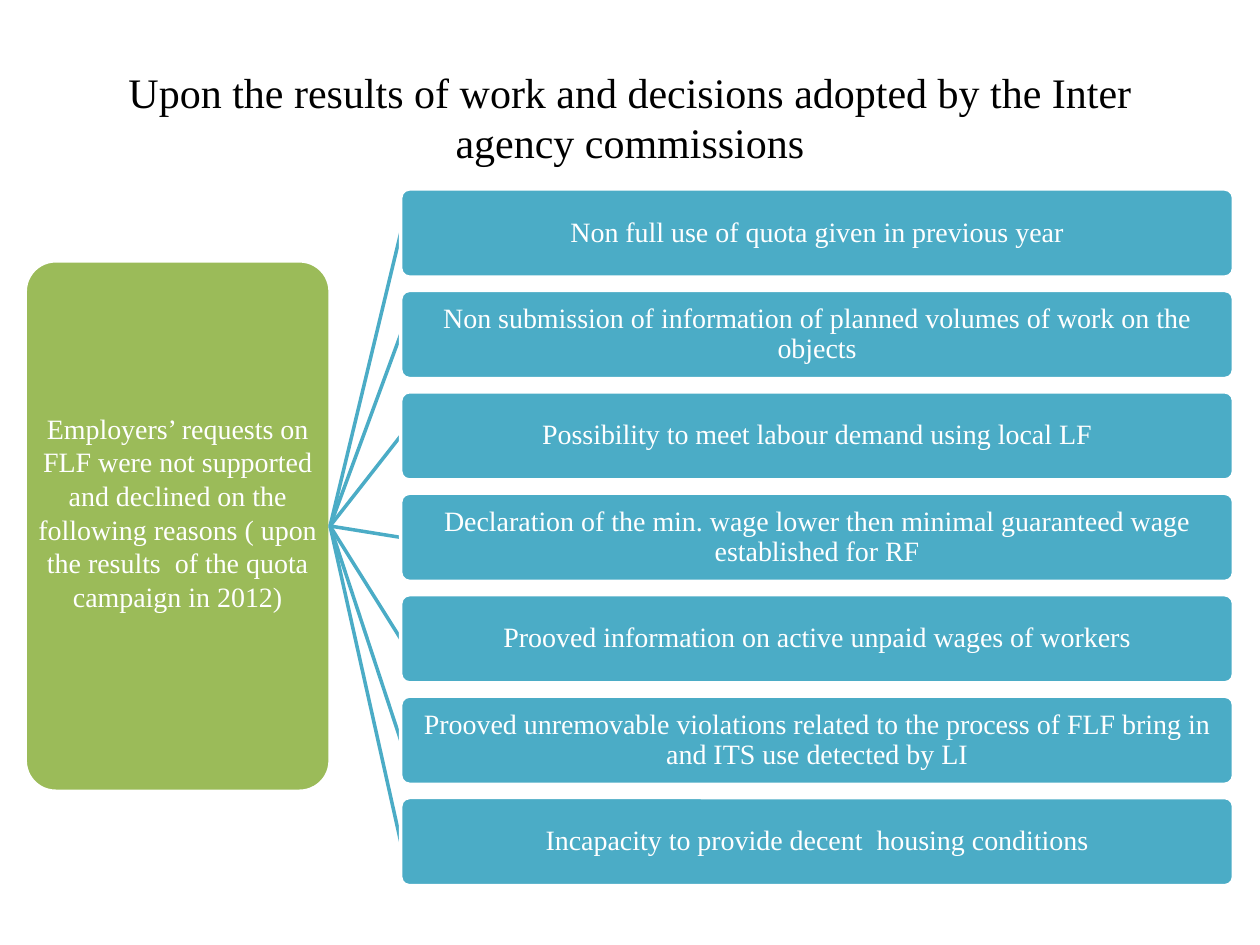
from pptx import Presentation
from pptx.dml.color import RGBColor
from pptx.enum import shapes, text
from pptx.oxml import ns, xmlchemy
from pptx.util import Inches, Pt

COLORS = {"title": "000000", "cause": "9BBB59", "reason": "4BACC6", "light": "FFFFFF"}
FONT = "Times New Roman"
TITLE = "Upon the results of work and decisions adopted by the Inter agency commissions"
CAUSE = ("Employers’ requests on FLF were not supported and declined on the following "
         "reasons ( upon the results  of the quota campaign in 2012)")
REASONS = [
    "Non full use of quota given in previous year",
    "Non submission of information of planned volumes of work on the objects",
    "Possibility to meet labour demand using local LF",
    "Declaration of the min. wage lower then minimal guaranteed wage established for RF",
    "Prooved information on active unpaid wages of workers",
    "Prooved unremovable violations related to the process of FLF bring in and ITS use detected by LI",
    "Incapacity to provide decent  housing conditions",
]


def rgb(name):
    return RGBColor.from_string(COLORS[name])


def write(frame, words, size, color, spacing=None):
    frame.text = words
    frame.word_wrap = True
    frame.vertical_anchor = text.MSO_ANCHOR.MIDDLE
    paragraph = frame.paragraphs[0]
    paragraph.alignment = text.PP_ALIGN.CENTER
    paragraph.line_spacing = spacing
    font = paragraph.runs[0].font
    for key, value in {"name": FONT, "size": Pt(size), "bold": False}.items():
        setattr(font, key, value)
    font.color.rgb = rgb(color)


def add_title(slide, left, top, width, height):
    title = slide.shapes.title
    title.left, title.top, title.width, title.height = left, top, width, height
    write(title.text_frame, TITLE, 24, "title")


def add_card(slide, box, words, fill, spacing=None, bottom=0.01):
    """Rounded card with a white outline and centred text."""
    card = slide.shapes.add_shape(shapes.MSO_SHAPE.ROUNDED_RECTANGLE, *box)
    card.adjustments[0] = 0.1
    card.shadow.inherit = False
    card.fill.solid()
    card.fill.fore_color.rgb = rgb(fill)
    card.line.color.rgb = rgb("light")
    card.line.width = Pt(2)
    frame = card.text_frame
    write(frame, words, 16, "light", spacing)
    for side in ("left", "right", "top"):
        setattr(frame, f"margin_{side}", Inches(0.01))
    frame.margin_bottom = Inches(bottom)
    return card


def add_branch(slide, start, end):
    branch = slide.shapes.add_connector(shapes.MSO_CONNECTOR.STRAIGHT, *start, *end)
    branch.line.color.rgb = rgb("reason")
    branch.line.width = Pt(2)
    properties = branch.element.find(ns.qn("p:spPr"))
    properties.append(xmlchemy.OxmlElement("a:effectLst"))


def add_reason_tree(slide, left, top, width, height):
    """Cause on the left, joined to an even column of reasons on the right."""
    cause_width, cause_height = Inches(2.42), Inches(4.21)
    bar_left, bar_height = left + Inches(2.98), Inches(0.7)
    middle = top + height // 2
    cause_box = (left, middle - cause_height // 2 - Inches(0.09), cause_width, cause_height)
    cause = add_card(slide, cause_box, CAUSE, "cause", bottom=0.23)
    start = (left + cause_width, cause.top + cause_height // 2)

    pitch = (height - bar_height) / (len(REASONS) - 1)
    for row, reason in enumerate(REASONS):
        bar_top = top + round(row * pitch)
        add_branch(slide, start, (bar_left, bar_top + bar_height // 2))
        add_card(slide, (bar_left, bar_top, left + width - bar_left, bar_height),
                 reason, "reason", spacing=0.9)


def main():
    deck = Presentation()
    deck.slide_width, deck.slide_height = Inches(10), Inches(7.5)
    slide = deck.slides.add_slide(deck.slide_layouts[5])
    add_title(slide, Inches(0.5), Inches(0.3), Inches(9), Inches(1.25))
    add_reason_tree(slide, Inches(0.2), Inches(1.5), Inches(9.59), Inches(5.53))
    deck.save("out.pptx")


if __name__ == "__main__":
    main()
